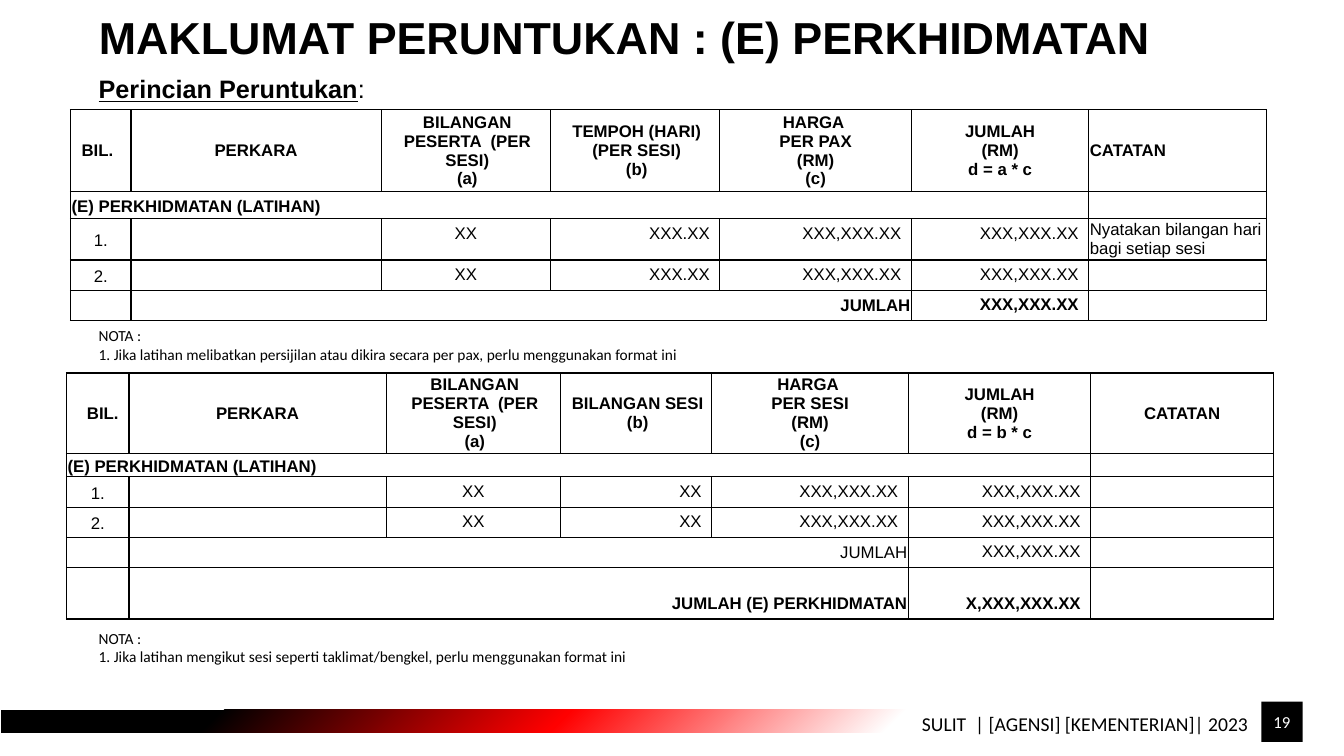
from pptx import Presentation
from pptx.dml.color import RGBColor
from pptx.enum.shapes import MSO_SHAPE
from pptx.enum.text import MSO_ANCHOR, MSO_AUTO_SIZE, PP_ALIGN
from pptx.oxml import parse_xml
from pptx.oxml.ns import nsdecls
from pptx.util import Pt

PX = 9144  # 100 px to the inch
BLACK = RGBColor(0, 0, 0)
WHITE = RGBColor(255, 255, 255)
RECT = MSO_SHAPE.RECTANGLE
LEFT, MID, RIGHT, JUST = PP_ALIGN.LEFT, PP_ALIGN.CENTER, PP_ALIGN.RIGHT, PP_ALIGN.JUSTIFY
TOP, CENTRE, BOTTOM = MSO_ANCHOR.TOP, MSO_ANCHOR.MIDDLE, MSO_ANCHOR.BOTTOM

deck = Presentation()
deck.slide_width, deck.slide_height = 1333 * PX, 750 * PX
slide = deck.slides.add_slide(deck.slide_layouts[5])
shapes = slide.shapes


def style(frame, size, face, bold=False, align=LEFT, color=BLACK):
    for par in frame.paragraphs:
        par.alignment = align
        par._p.get_or_add_endParaRPr().set("sz", str(size * 100))
        for run in par.runs:
            font = run.font
            font.size, font.name, font.bold = Pt(size), face, bold
            font.color.rgb = color


def label(box, text, size, face, align=LEFT, bold=False):
    frame = shapes.add_textbox(*[n * PX for n in box]).text_frame
    frame.word_wrap = True
    frame.text = text
    style(frame, size, face, bold, align)
    return frame


# Footer bar, with a gradient that spreads from the lower right corner
bar = shapes.add_shape(RECT, 1 * PX, 704 * PX, 1262 * PX, 23 * PX)
bar.shadow.inherit = False
bar.line.fill.background()
bar.fill.background()
stops = "".join(
    f'<a:gs pos="{pos}000"><a:srgbClr val="{hue}"/></a:gs>'
    for pos, hue in [(30, "FFFFFF"), (56, "FF0000"), (83, "000000")])
blank = bar._element.spPr.find("{*}noFill")
blank.addnext(parse_xml(
    f'<a:gradFill {nsdecls("a")} rotWithShape="1"><a:gsLst>{stops}</a:gsLst>'
    '<a:path path="circle"><a:fillToRect l="100000" t="100000"/></a:path></a:gradFill>'))
bar._element.spPr.remove(blank)

# Footer text and page number
foot = label((786, 702, 462, 34), "SULIT  | [AGENSI] [KEMENTERIAN]| 2023", 14, "Calibri", RIGHT)
foot.vertical_anchor = CENTRE
foot.paragraphs[0].line_spacing = 0.9
page = shapes.add_shape(RECT, 1251 * PX, 696 * PX, 41 * PX, 40 * PX)
page.shadow.inherit = False
page.fill.solid()
page.fill.fore_color.rgb = BLACK
page.line.fill.background()
page.text_frame.text = "19"
page.text_frame.vertical_anchor = CENTRE
style(page.text_frame, 12, "Calibri", align=MID, color=WHITE)

# Title and subtitle
title = shapes.title
title.left, title.top, title.width, title.height = [n * PX for n in (88, 5, 1153, 80)]
head = title.text_frame
head.text = "MAKLUMAT PERUNTUKAN : (E) PERKHIDMATAN"
head.auto_size = MSO_AUTO_SIZE.NONE
head.vertical_anchor = TOP
head.paragraphs[0].space_before = Pt(3)
style(head, 32, "Arial", True)
sub = label((88, 68, 835, 40), "Perincian Peruntukan", 18, "Arial", JUST, True)
sub.paragraphs[0].runs[0].font.underline = True
colon = sub.paragraphs[0].add_run()
colon.text = ": "
colon.font.size, colon.font.name, colon.font.color.rgb = Pt(18), "Arial", BLACK

# Notes below the tables
for y, note in [
    (319, "1. Jika latihan melibatkan persijilan atau dikira secara per pax, perlu menggunakan format ini"),
    (619, "1. Jika latihan mengikut sesi seperti taklimat/bengkel, perlu menggunakan format ini"),
]:
    label((88, y, 1065, 47), "NOTA :\n" + note, 11, "Calibri")

# Table contents
GROUP = "(E) PERKHIDMATAN (LATIHAN)"
PAX = "BILANGAN PESERTA  (PER SESI)\n(a)"
SUM = "XXX,XXX.XX"
tables = [
    dict(x=70, y=109, cols=[60, 248, 168, 168, 190, 176, 176],
         rows=[81, 27, 41, 30, 30], ends=LEFT, cells=[
        ["BIL.", "PERKARA", PAX, "TEMPOH (HARI)\n(PER SESI)\n(b)",
         "HARGA \nPER PAX\n(RM)\n(c)", "JUMLAH\n(RM)\nd = a * c", "CATATAN"],
        [GROUP],
        ["1.", "", "XX", "XXX.XX", SUM, SUM, "Nyatakan bilangan hari bagi setiap sesi"],
        ["2.", "", "XX", "XXX.XX", SUM, SUM],
        ["", "JUMLAH", "", "", "", SUM]]),
    dict(x=66, y=370, cols=[62, 255, 173, 150, 195, 181, 181],
         rows=[80, 23, 30, 30, 30, 51], ends=MID, cells=[
        ["BIL.", "PERKARA", PAX, "BILANGAN SESI\n(b)",
         "HARGA \nPER SESI\n(RM)\n(c)", "JUMLAH\n(RM)\nd = b * c", "CATATAN"],
        [GROUP],
        ["1.", "", "XX", "XX", SUM, SUM],
        ["2.", "", "XX", "XX", SUM, SUM],
        ["", "JUMLAH", "", "", "", SUM],
        ["", "JUMLAH (E) PERKHIDMATAN", "", "", "", "X,XXX,XXX.XX"]]),
]
ALIGNS = [MID, RIGHT, MID, RIGHT, RIGHT, RIGHT, LEFT]
INDENTS = {0: 10, 2: 3, 3: 3}

# Tables
for item in tables:
    cols, rows, cells = item["cols"], item["rows"], item["cells"]
    grid = shapes.add_table(len(rows), len(cols), item["x"] * PX, item["y"] * PX,
                            sum(cols) * PX, sum(rows) * PX).table
    for col, wide in zip(grid.columns, cols):
        col.width = wide * PX
    for row, high in zip(grid.rows, rows):
        row.height = high * PX
    last = len(rows) - 1
    for r in range(len(rows)):
        for c in range(len(cols)):
            cell = grid.cell(r, c)
            cell.text = cells[r][c] if c < len(cells[r]) else ""
            align = ALIGNS[c]
            if r == 0:
                align = item["ends"] if c in (0, 6) else MID
            elif r == 1:
                align = LEFT
            style(cell.text_frame, 12, "Arial", r in (0, 1, last), align)

            # Figures keep wide margins, the rest sits tight in the middle
            figure = r > 1 and 2 <= c <= 5
            cell.vertical_anchor = TOP if figure else CENTRE
            side, edge = (10, 5) if figure else (1, 0)
            cell.margin_left = cell.margin_right = side * PX
            cell.margin_top = cell.margin_bottom = edge * PX
            if r == 5:
                cell.vertical_anchor = BOTTOM
                cell.margin_bottom = 6 * PX
            for par in cell.text_frame.paragraphs:
                if r == 0 and c in INDENTS:
                    par._p.get_or_add_pPr().set("marL", str(INDENTS[c] * PX))
                elif c == 0 and 1 <= r <= 3:
                    par.line_spacing = Pt(15.7)

            # Thin black borders and no fill
            cell.fill.background()
            for n, side in enumerate("LRTB"):
                cell._tc.get_or_add_tcPr().insert(n, parse_xml(
                    f'<a:ln{side} {nsdecls("a")} w="12700"><a:solidFill>'
                    f'<a:srgbClr val="{BLACK}"/></a:solidFill></a:ln{side}>'))
    grid.cell(1, 0).merge(grid.cell(1, 5))
    for r in range(4, len(rows)):
        grid.cell(r, 1).merge(grid.cell(r, 4))

deck.save("out.pptx")
